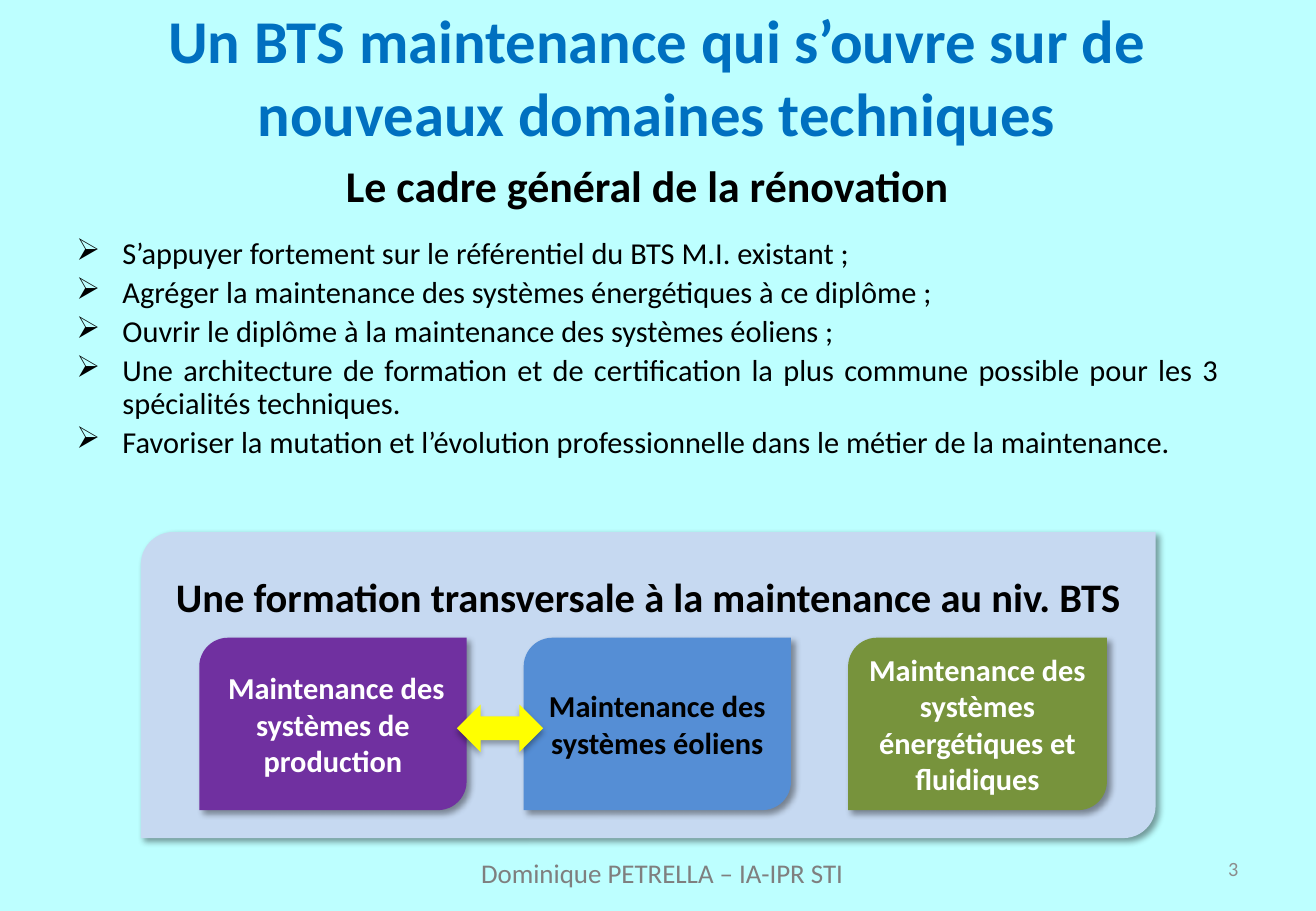
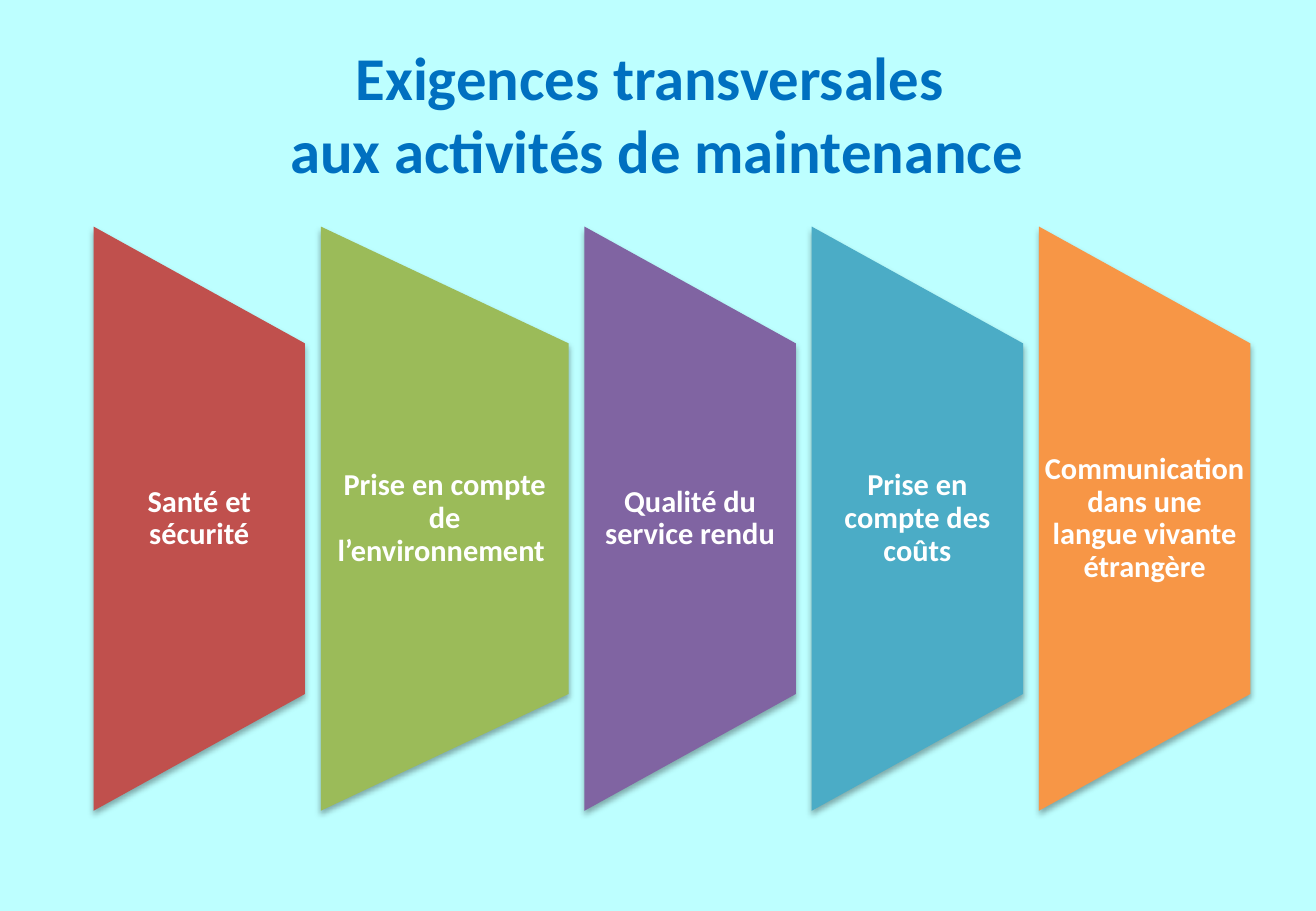
"""Build two slides on the renewal of a maintenance diploma."""
import pptx
import pptx.dml.color
import pptx.enum.shapes
import pptx.enum.text
import pptx.oxml
import pptx.oxml.ns
import pptx.text.text
import pptx.util

Inches = pptx.util.Inches
Pt = pptx.util.Pt
Geometry = pptx.enum.shapes.MSO_SHAPE
Align = pptx.enum.text.PP_ALIGN
Anchor = pptx.enum.text.MSO_ANCHOR

FONT = "Calibri"
BACKGROUND, TITLE_BLUE = "BDFFFF", "0070C0"
BLACK, WHITE = "000000", "FFFFFF"
CARD_SHADOW = dict(alpha=40, blur=4, distance=3, angle=45)
PANEL_SHADOW = dict(alpha=32, blur=3.5, distance=2.2, angle=90)

RENEWAL_TITLE = "Un BTS maintenance qui s’ouvre sur de nouveaux domaines techniques"
FRAMEWORK = "Le cadre général de la rénovation"
GOALS = [
    "S’appuyer fortement sur le référentiel du BTS M.I. existant ;",
    "Agréger la maintenance des systèmes énergétiques à ce diplôme ;",
    "Ouvrir le diplôme à la maintenance des systèmes éoliens ;",
    "Une architecture de formation et de certification la plus commune possible pour les 3 spécialités techniques.",
    "Favoriser la mutation et l’évolution professionnelle dans le métier de la maintenance.",
]
TRAINING = "Une formation transversale à la maintenance au niv. BTS"
SPECIALITIES = [
    (" Maintenance des systèmes de production", 2.2, "7030A0", WHITE),
    ("Maintenance des systèmes éoliens", 2.2, "558ED5", BLACK),
    ("Maintenance des systèmes énergétiques et fluidiques", 2.13, "77933C", WHITE),
]
AUTHOR = "Dominique PETRELLA – IA-IPR STI"
PAGE_NUMBER = "3"

DEMANDS_TITLE = "Exigences transversales \vaux activités de maintenance"
DEMANDS = [
    ("Santé et sécurité", 1.74, "C0504D", 0.12),
    ("Prise en compte de l’environnement ", 2.04, "9BBB59", 0.12),
    ("Qualité du service rendu", 1.74, "8064A2", 0.12),
    ("Prise en compte des coûts", 1.74, "4BACC6", 0.12),
    ("Communication dans une langue vivante étrangère", 1.74, "F79646", 0.04),
]


def rgb(value):
    """Turn a hex string into a colour."""
    return pptx.dml.color.RGBColor.from_string(value)


def style_font(font, size, color, bold):
    """Format a font."""
    font.name, font.size, font.bold = FONT, Pt(size), bold
    font.fill.solid()
    font.fill.fore_color.rgb = rgb(color)


def write(frame, text, size=18, color=BLACK, bold=False, align=Align.CENTER,
          anchor=Anchor.TOP, spacing=1.0, before=0, after=0, side=0.1, bullet=None):
    """Add one formatted paragraph to a text frame."""
    frame.word_wrap = True
    frame.vertical_anchor = anchor
    frame.margin_left = frame.margin_right = Inches(side)
    paragraph = frame.add_paragraph() if frame.text else frame.paragraphs[0]
    paragraph.alignment, paragraph.line_spacing = align, spacing
    paragraph.space_before, paragraph.space_after = Pt(before), Pt(after)
    run = paragraph.add_run()
    run.text = text
    style_font(run.font, size, color, bold)
    if bullet:
        properties = paragraph._p.get_or_add_pPr()
        properties.set("marL", str(Inches(0.38)))
        properties.set("indent", str(-Inches(0.38)))
        mark = pptx.oxml.parse_xml(f'<a:buChar {pptx.oxml.ns.nsdecls("a")} char="{bullet}"/>')
        properties.append(mark)


def add_text(shapes, box, text, **style):
    """Add a text box holding one paragraph and return its frame."""
    frame = shapes.add_textbox(*map(Inches, box)).text_frame
    write(frame, text, **style)
    return frame


def add_filled(shapes, geometry, box, color, shadow):
    """Add a borderless filled shape with a soft shadow."""
    shape = shapes.add_shape(geometry, *map(Inches, box))
    shape.fill.solid()
    shape.fill.fore_color.rgb = rgb(color)
    shape.line.fill.background()
    shape.shadow.inherit = False
    effects = shape._element.spPr.find(pptx.oxml.ns.qn("a:effectLst"))
    effects.append(pptx.oxml.parse_xml(
        f'<a:outerShdw {pptx.oxml.ns.nsdecls("a")} blurRad="{Pt(shadow["blur"])}" '
        f'dist="{Pt(shadow["distance"])}" dir="{shadow["angle"] * 60000}" rotWithShape="0">'
        f'<a:srgbClr val="{BLACK}"><a:alpha val="{shadow["alpha"] * 1000}"/></a:srgbClr>'
        '</a:outerShdw>'))
    return shape


def style_master(deck):
    """Set the background and title style that the slides share."""
    master = deck.slide_master
    master.background.fill.solid()
    master.background.fill.fore_color.rgb = rgb(BACKGROUND)
    defaults = master.element.xpath("p:txStyles/p:titleStyle/a:lvl1pPr/a:defRPr")[0]
    style_font(pptx.text.text.Font(defaults), 36, TITLE_BLUE, True)


def add_slide(deck, title, top):
    """Add a slide with its title in place."""
    slide = deck.slides.add_slide(deck.slide_layouts[5])
    heading = slide.shapes.title
    heading.left, heading.top = Inches(0.53), Inches(top)
    heading.width, heading.height = Inches(9.75), Inches(1.25)
    heading.text_frame.text = title
    heading.text_frame.auto_size = pptx.enum.text.MSO_AUTO_SIZE.NONE
    heading.text_frame.vertical_anchor = Anchor.MIDDLE
    return slide


def build_renewal(deck):
    """Build the slide on the framework and the three specialities."""
    shapes = add_slide(deck, RENEWAL_TITLE, 0).shapes
    add_text(shapes, (7.76, 6.95, 2.53, 0.4), PAGE_NUMBER, size=12, color="8C8C8C",
             align=Align.RIGHT, anchor=Anchor.MIDDLE)
    goals = add_text(shapes, (0.53, 1.31, 9.6, 2.99), FRAMEWORK, size=26, bold=True,
                     spacing=0.9, before=5.2, after=12)
    for goal in GOALS:
        write(goals, goal, align=Align.JUSTIFY, spacing=0.9, before=3.6, bullet="➢")

    training = add_filled(shapes, Geometry.ROUND_2_DIAG_RECTANGLE, (1.16, 4.38, 8.35, 2.52),
                          "C6D9F1", CARD_SHADOW)
    training.adjustments[0] = 0.105
    write(training.text_frame, TRAINING, size=24, bold=True, spacing=1.5)

    left, gap = 1.64, 0.47
    for name, width, fill, color in SPECIALITIES:
        card = add_filled(shapes, Geometry.ROUND_2_DIAG_RECTANGLE, (left, 5.25, width, 1.42),
                          fill, CARD_SHADOW)
        write(card.text_frame, name, color=color, bold=True, anchor=Anchor.MIDDLE)
        left += width + gap

    add_text(shapes, (1.75, 7, 7.4, 0.37), AUTHOR, size=16, color="7F7F7F")
    add_filled(shapes, Geometry.LEFT_RIGHT_ARROW, (3.76, 5.8, 0.71, 0.39), "FFFF00", PANEL_SHADOW)


def build_demands(deck):
    """Build the slide on the five cross-cutting demands."""
    slide = add_slide(deck, DEMANDS_TITLE, 0.3)
    left, gap, middle, length, text_height = 0.77, 0.13, 4.27, 4.81, 2.89
    for name, width, fill, side in DEMANDS:
        shapes = slide.shapes.add_group_shape().shapes
        box = (left + (width - length) / 2, middle - width / 2, length, width)
        panel = add_filled(shapes, Geometry.FLOWCHART_MANUAL_OPERATION, box, fill, PANEL_SHADOW)
        panel.rotation = 270
        label = add_text(shapes, (left, middle - text_height / 2, width, text_height), name,
                         color=WHITE, bold=True, anchor=Anchor.MIDDLE, spacing=0.9, side=side)
        label.margin_top = label.margin_bottom = 0
        left += width + gap


def main():
    """Build and save the deck."""
    deck = pptx.Presentation()
    deck.slide_width, deck.slide_height = Inches(10.83), Inches(7.5)
    style_master(deck)
    build_renewal(deck)
    build_demands(deck)
    deck.save("out.pptx")


if __name__ == "__main__":
    main()
